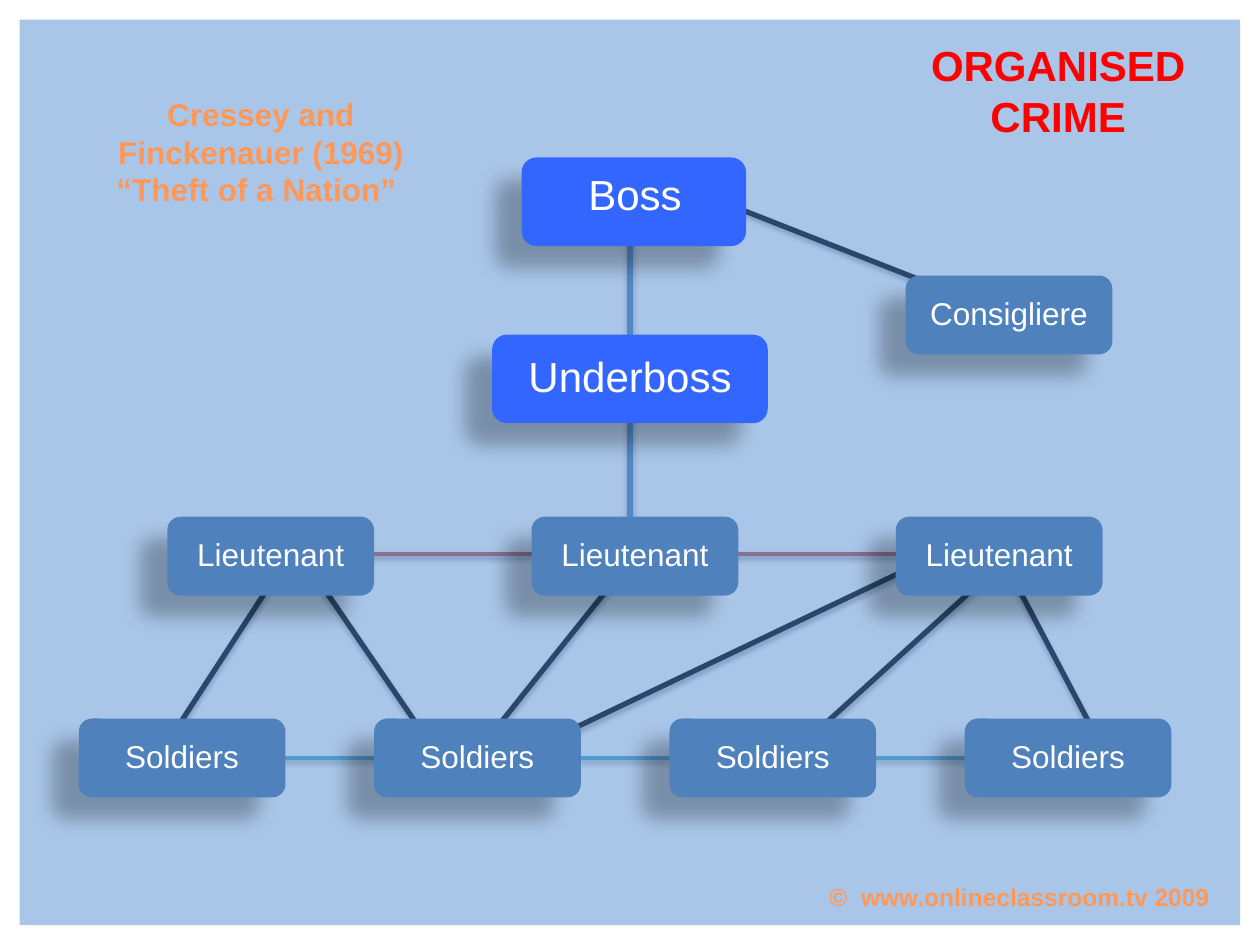
from dataclasses import dataclass

from lxml.etree import SubElement
from pptx import Presentation
from pptx.dml.color import RGBColor
from pptx.enum.shapes import MSO_CONNECTOR, MSO_SHAPE
from pptx.enum.text import MSO_ANCHOR, MSO_AUTO_SIZE, PP_ALIGN
from pptx.oxml.ns import qn
from pptx.util import Inches, Pt

CELL = 10 / 64


@dataclass(frozen=True)
class Theme:
    font: str = "Arial"
    panel: str = "558ED5"
    chief: str = "3366FF"
    member: str = "4F81BD"
    label: str = "FFFFFF"
    title: str = "FF0000"
    command: str = "000000"
    lieutenants: str = "C0504D"
    soldiers: str = "4BACC6"
    orange: tuple = ((0, "9D4700"), (78, "FF9856"), (100, "FFF5F1"))
    large: int = 24
    medium: int = 18
    small: int = 14
    box_shadow: tuple = (28, 11.8, 19.7, 141)
    thick_shadow: tuple = (35, 3.15, 1.8, 90)
    thin_shadow: tuple = (38, 3.15, 1.6, 90)


THEME = Theme()


def grid(*cells):
    return [Inches(cell * CELL) for cell in cells]


def apply_format(target, values):
    for name, value in values.items():
        setattr(target, name, value)


def add_shadow(element, shadow):
    alpha, blur, distance, angle = shadow
    effects = SubElement(element.spPr, qn("a:effectLst"))
    outer = SubElement(effects, qn("a:outerShdw"), blurRad=str(Pt(blur)), dist=str(Pt(distance)),
                       dir=str(angle * 60000), algn="ctr", rotWithShape="0")
    black = SubElement(outer, qn("a:srgbClr"), val="000000")
    SubElement(black, qn("a:alpha"), val=str(alpha * 1000))


def add_block(shapes, kind, place, colour):
    block = shapes.add_shape(kind, *grid(*place))
    block.shadow.inherit = False
    block.fill.solid()
    block.fill.fore_color.rgb = RGBColor.from_string(colour)
    block.line.fill.background()
    return block


def add_panel(slide):
    panel = add_block(slide.shapes, MSO_SHAPE.RECTANGLE, (1, 1, 62, 46), THEME.panel)
    colour = panel.fill._xPr.find(qn("a:solidFill"))[0]
    SubElement(colour, qn("a:alpha"), val="50000")


def add_link(slide, ends, colour, width, shadow):
    link = slide.shapes.add_connector(MSO_CONNECTOR.STRAIGHT, *grid(*ends))
    link.line.color.rgb = RGBColor.from_string(colour)
    link.line.width = Pt(width)
    add_shadow(link._element, shadow)


def paint_text(font, colour):
    if isinstance(colour, str):
        font.color.rgb = RGBColor.from_string(colour)
        return
    font.fill.gradient()
    font.fill.gradient_angle = 270
    stops = font._element.find(qn("a:gradFill")).find(qn("a:gsLst"))
    stops.clear()
    for position, shade in colour:
        stop = SubElement(stops, qn("a:gs"), pos=str(position * 1000))
        SubElement(stop, qn("a:srgbClr"), val=shade)


def add_text(shapes, place, lines, size, colour, bold=False, frame=None, paragraph=None):
    text = shapes.add_textbox(*grid(*place)).text_frame
    apply_format(text, {"word_wrap": True, **(frame or {})})
    for index, line in enumerate(lines):
        row = text.add_paragraph() if index else text.paragraphs[0]
        apply_format(row, paragraph or {})
        run = row.add_run()
        run.text = line
        apply_format(run.font, {"name": THEME.font, "size": Pt(size), "bold": bold})
        paint_text(run.font, colour)


def add_role(slide, role, place, chief=False, label_place=None):
    left, top, width, height = place
    side, size, inset = (0.45, THEME.large, 1.2) if chief else (0.15, THEME.medium, 0.9)
    card = slide.shapes.add_group_shape().shapes
    box = add_block(card, MSO_SHAPE.ROUNDED_RECTANGLE, place, THEME.chief if chief else THEME.member)
    box._element.spPr.remove(box._element.spPr.find(qn("a:effectLst")))
    add_shadow(box._element, THEME.box_shadow)
    margin = Inches(inset * CELL)
    frame = {f"margin_{edge}": margin for edge in ("left", "top", "right", "bottom")}
    frame["vertical_anchor"] = MSO_ANCHOR.MIDDLE
    label_place = label_place or (left + side, top + 0.2, width - 2 * side, height - 0.4)
    add_text(card, label_place, [role], size, THEME.label, frame=frame,
             paragraph={"alignment": PP_ALIGN.CENTER, "line_spacing": 0.9})


def add_links(slide):
    chain_of_command = [
        (51, 28.5, 56, 38), (51, 28.5, 40, 38.5), (32, 28.5, 24, 38.5), (15.5, 28.5, 22, 38),
        (14.5, 28.5, 8, 38.5), (48, 28, 26, 38.5), (36, 10, 50, 15.5),
    ]
    for ends in chain_of_command:
        add_link(slide, ends, THEME.command, 3, THEME.thick_shadow)
    add_link(slide, (11, 38.5, 54.5, 38.5), THEME.soldiers, 2, THEME.thin_shadow)
    add_link(slide, (16.5, 28.15, 51.5, 28.15), THEME.lieutenants, 2, THEME.thin_shadow)
    add_link(slide, (32, 11, 32, 28.5), THEME.member, 3, THEME.thick_shadow)


def add_roles(slide):
    add_role(slide, "Boss", (26.5, 8, 11.4, 4.5), True, (26, 8, 12.5, 4))
    add_role(slide, "Consigliere", (46, 14, 10.5, 4))
    add_role(slide, "Underboss", (25, 17, 14, 4.5), True)
    for column in range(3):
        add_role(slide, "Lieutenant", (8.5 + 18.5 * column, 26.25, 10.5, 4))
    for column in range(4):
        add_role(slide, "Soldiers", (4 + 15 * column, 36.5, 10.5, 4))


def main():
    deck = Presentation()
    apply_format(deck, {"slide_width": Inches(10), "slide_height": Inches(7.5)})
    slide = deck.slides.add_slide(deck.slide_layouts[6])
    add_links(slide)
    add_panel(slide)
    grow = {"auto_size": MSO_AUTO_SIZE.SHAPE_TO_FIT_TEXT}
    centred = {"alignment": PP_ALIGN.CENTER}
    add_text(slide.shapes, (41.5, 44.5, 21, 2.15), ["©  www.onlineclassroom.tv 2009"],
             THEME.small, THEME.orange, True, grow)
    add_text(slide.shapes, (44.5, 1.7, 18.5, 5.8), ["ORGANISED CRIME"],
             THEME.large, THEME.title, True, grow, centred)
    add_roles(slide)
    add_text(slide.shapes, (4, 4.5, 18.5, 6.5), ["Cressey and Finckenauer (1969)", "“Theft of a Nation” "],
             THEME.medium, THEME.orange, True, grow, centred)
    deck.save("out.pptx")


if __name__ == "__main__":
    main()
